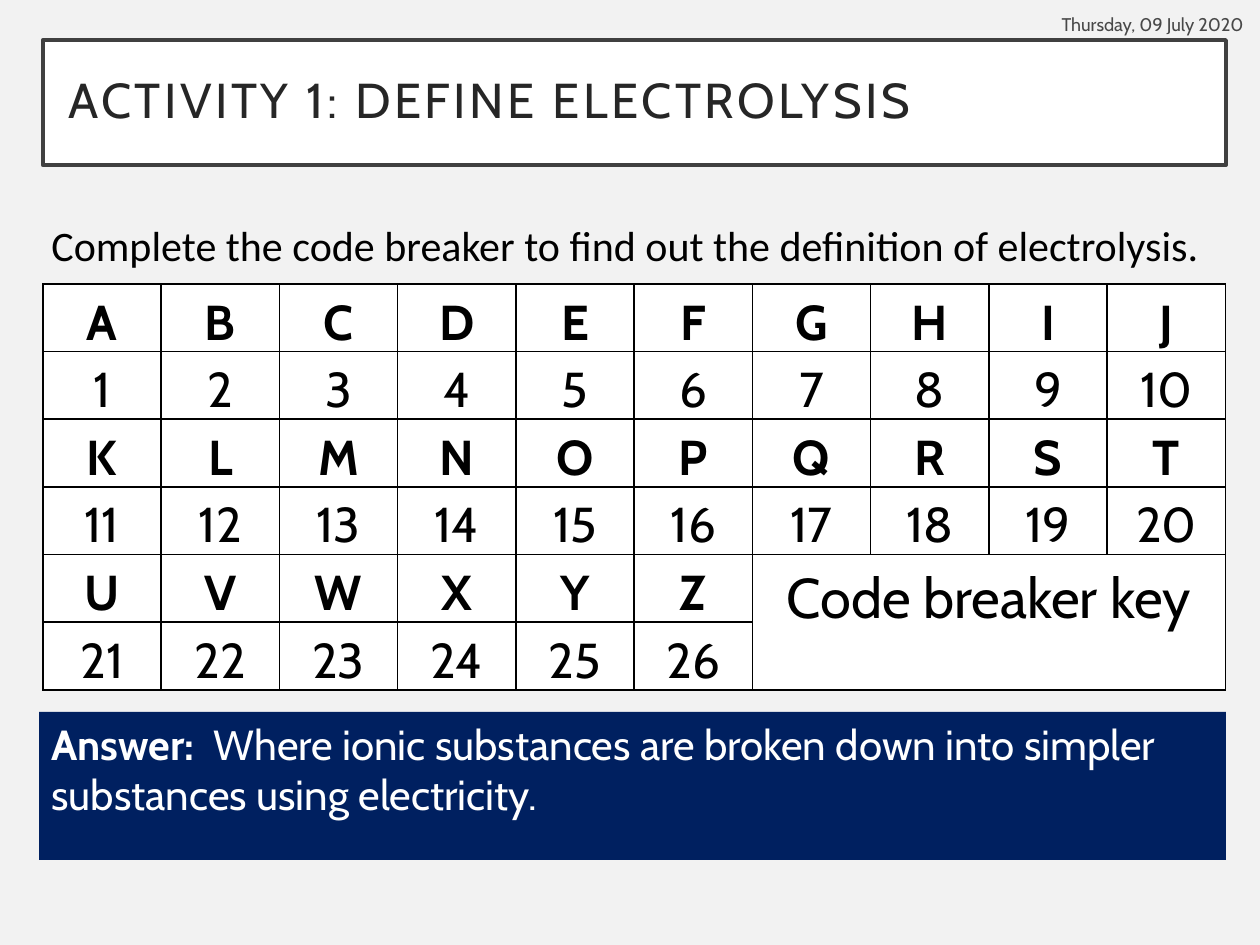
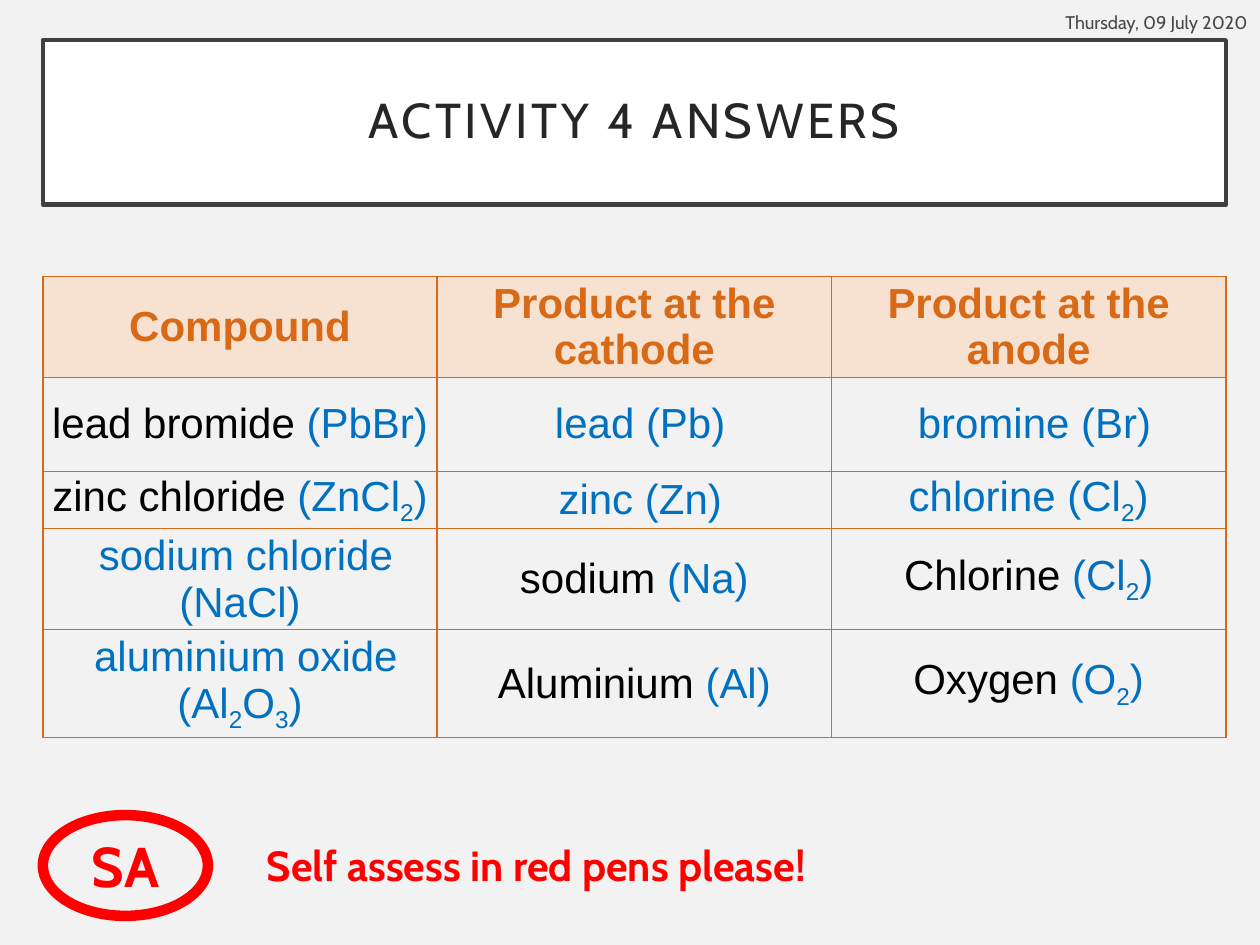
from itertools import groupby

from lxml import etree
from pptx import Presentation
from pptx.dml.color import RGBColor
from pptx.enum import shapes, text
from pptx.oxml.ns import qn
from pptx.util import Pt

# Content
DATE = "Thursday, 09 July 2020"
TASK = "Complete the code breaker to find out the definition of electrolysis."
ABC = "ABCDEFGHIJKLMNOPQRSTUVWXYZ"
KEY = "Code breaker key"
ANSWER = ("Answer:  ", "Where ionic substances are broken down into simpler "
          "substances using electricity.")
HEADS = ["Compound", "Product at the cathode", "Product at the anode"]
# Given part | answer part; digits are set as subscripts
ROWS = [
    ["lead bromide |(PbBr)", " |lead (Pb)", " |bromine (Br)"],
    ["zinc chloride |(ZnCl2)", " |zinc (Zn)", "|chlorine (Cl2)"],
    [" |sodium chloride (NaCl)", "sodium |(Na)", "Chlorine |(Cl2)"],
    [" |aluminium oxide (Al2O3)", "Aluminium |(Al)", "Oxygen |(O2)"],
]
HIGHS = [55.4, 53.7, 30.4, 53.6, 57.4]
MARK = "SA"
NOTE = "Self assess in red pens please!"

# Style
PALE = RGBColor(0xF2, 0xF2, 0xF2)
WHITE = RGBColor(0xFF, 0xFF, 0xFF)
BLACK = RGBColor(0, 0, 0)
INK = RGBColor(0x26, 0x26, 0x26)
FRAME = RGBColor(0x40, 0x40, 0x40)
NAVY = RGBColor(0x00, 0x20, 0x60)
RUST = RGBColor(0xD8, 0x69, 0x16)
PEACH = RGBColor(0xF7, 0xE1, 0xD0)
BLUE = RGBColor(0x00, 0x70, 0xC0)
RED = RGBColor(0xFF, 0, 0)
FONT = "Cabin"
LEFT, WIDE = 24.5, 676
MID = text.PP_ALIGN.CENTER
COLS = 10


def add_run(para, words, size, color, bold=False, name=FONT):
    run = para.add_run()
    run.text = words
    font = run.font
    font.size, font.name, font.bold = Pt(size), name, bold
    font.color.rgb = color
    return run


def add_box(slide, box, kind=None, fill=None, line=None, weight=1):
    """Add a text box, or a preset shape if a kind is given."""
    box = [Pt(n) for n in box]
    if kind is None:
        part = slide.shapes.add_textbox(*box)
    else:
        part = slide.shapes.add_shape(kind, *box)
        part.shadow.inherit = False
        if fill is None:
            part.fill.background()
        else:
            part.fill.solid()
            part.fill.fore_color.rgb = fill
        if line is None:
            part.line.fill.background()
        else:
            part.line.color.rgb = line
            part.line.width = Pt(weight)
    frame = part.text_frame
    frame.word_wrap = True
    frame.vertical_anchor = text.MSO_ANCHOR.TOP
    para = frame.paragraphs[0]
    para.alignment = text.PP_ALIGN.LEFT
    return frame, para


def add_title(slide, words, high, align):
    frame, para = add_box(slide, (LEFT, 23, WIDE, high),
                          shapes.MSO_SHAPE.RECTANGLE, WHITE, FRAME, 2.5)
    frame.vertical_anchor = text.MSO_ANCHOR.MIDDLE
    frame.margin_left = frame.margin_right = Pt(14.4)
    frame.margin_top = frame.margin_bottom = Pt(14.4)
    para.alignment, para.line_spacing = align, 0.9
    run = add_run(para, words, 28, INK)
    run.font._element.set("spc", "200")


def add_date(slide, left, top):
    frame, para = add_box(slide, (left, top, 162.7, 25.2))
    frame.vertical_anchor = text.MSO_ANCHOR.MIDDLE
    para.alignment = text.PP_ALIGN.RIGHT
    run = add_run(para, DATE, 10.5, BLACK)
    tint = run.font._element.find(".//" + qn("a:srgbClr"))
    etree.SubElement(tint, qn("a:alpha"), val="70000")


def add_grid(slide, top, cols, highs, line, fill=None):
    """Add a plain table with one border colour on every cell."""
    part = slide.shapes.add_table(len(highs), cols, Pt(LEFT), Pt(top),
                                  Pt(WIDE), Pt(sum(highs)))
    grid = part.table
    grid.first_row = grid.horz_banding = False
    for col in grid.columns:
        col.width = Pt(WIDE / cols)
    for row, high in zip(grid.rows, highs):
        row.height = Pt(high)
    for cell in grid.iter_cells():
        cell.margin_left = cell.margin_right = Pt(5)
        cell.margin_top = cell.margin_bottom = 0
        for side in ("lnL", "lnR", "lnT", "lnB"):
            edge = etree.SubElement(cell._tc.get_or_add_tcPr(),
                                    qn("a:" + side), w=str(Pt(1)))
            paint = etree.SubElement(edge, qn("a:solidFill"))
            etree.SubElement(paint, qn("a:srgbClr"), val=str(line))
        fill_cell(cell, fill)
        cell.text_frame.paragraphs[0].alignment = MID
    return grid


def fill_cell(cell, fill):
    if fill is None:
        cell.fill.background()
    else:
        cell.fill.solid()
        cell.fill.fore_color.rgb = fill


def add_code(slide):
    """Letters in bold above their numbers, with the key label at the end."""
    grid = add_grid(slide, 162.2, COLS, [38.66] * 6, BLACK, WHITE)

    def put(row, col, words, size, bold):
        para = grid.cell(row, col).text_frame.paragraphs[0]
        para.line_spacing = 1.15
        add_run(para, words, size, BLACK, bold)

    for i, letter in enumerate(ABC):
        row, col = divmod(i, COLS)
        put(2 * row, col, letter, 28, True)
        put(2 * row + 1, col, str(i + 1), 28, False)
    free = len(ABC) % COLS
    grid.cell(4, free).merge(grid.cell(5, COLS - 1))
    put(4, free, KEY, 32, False)


def add_products(slide):
    grid = add_grid(slide, 158, len(HEADS), HIGHS, RUST)
    for cell in grid.iter_cells():
        cell.vertical_anchor = text.MSO_ANCHOR.MIDDLE
        para = cell.text_frame.paragraphs[0]
        para.space_before = para.space_after = Pt(3)
    for col, head in enumerate(HEADS):
        cell = grid.cell(0, col)
        fill_cell(cell, PEACH)
        add_run(cell.text_frame.paragraphs[0], head, 24, RUST, True, "Arial")
    for r, row in enumerate(ROWS, 1):
        for c, words in enumerate(row):
            para = grid.cell(r, c).text_frame.paragraphs[0]
            for part, color in zip(words.split("|"), (BLACK, BLUE)):
                for low, bits in groupby(part, str.isdigit):
                    run = add_run(para, "".join(bits), 24, color, name="Arial")
                    if low:
                        run.font._element.set("baseline", "-25000")


def main():
    deck = Presentation()
    deck.slide_width, deck.slide_height = Pt(720), Pt(540)
    back = deck.slide_master.background.fill
    back.solid()
    back.fore_color.rgb = PALE
    blank = deck.slide_layouts[6]

    # Code breaker
    slide = deck.slides.add_slide(blank)
    add_title(slide, "ACTIVITY 1: DEFINE ELECTROLYSIS", 71.3,
              text.PP_ALIGN.LEFT)
    add_date(slide, 555.1, 1)
    _, para = add_box(slide, (22.3, 121.7, 678.5, 36))
    add_run(para, TASK, 24, BLACK, name="Calibri")
    add_code(slide)
    _, para = add_box(slide, (22.3, 406.8, 678.2, 84.6),
                      shapes.MSO_SHAPE.RECTANGLE, NAVY)
    para.space_before = Pt(10)
    for words, bold in zip(ANSWER, (True, False)):
        add_run(para, words, 24, WHITE, bold)

    # Answers
    slide = deck.slides.add_slide(blank)
    add_title(slide, "ACTIVITY 4 ANSWERS", 94, MID)
    add_date(slide, 557.3, 0)
    add_products(slide)
    frame, para = add_box(slide, (24.5, 465.8, 94.3, 57.6),
                          shapes.MSO_SHAPE.OVAL, line=RED, weight=6)
    frame.vertical_anchor = text.MSO_ANCHOR.MIDDLE
    para.alignment = MID
    add_run(para, MARK, 32, RED, True)
    _, para = add_box(slide, (145.4, 476, 419, 36))
    add_run(para, NOTE, 24, RED, True)

    deck.save("out.pptx")


if __name__ == "__main__":
    main()
